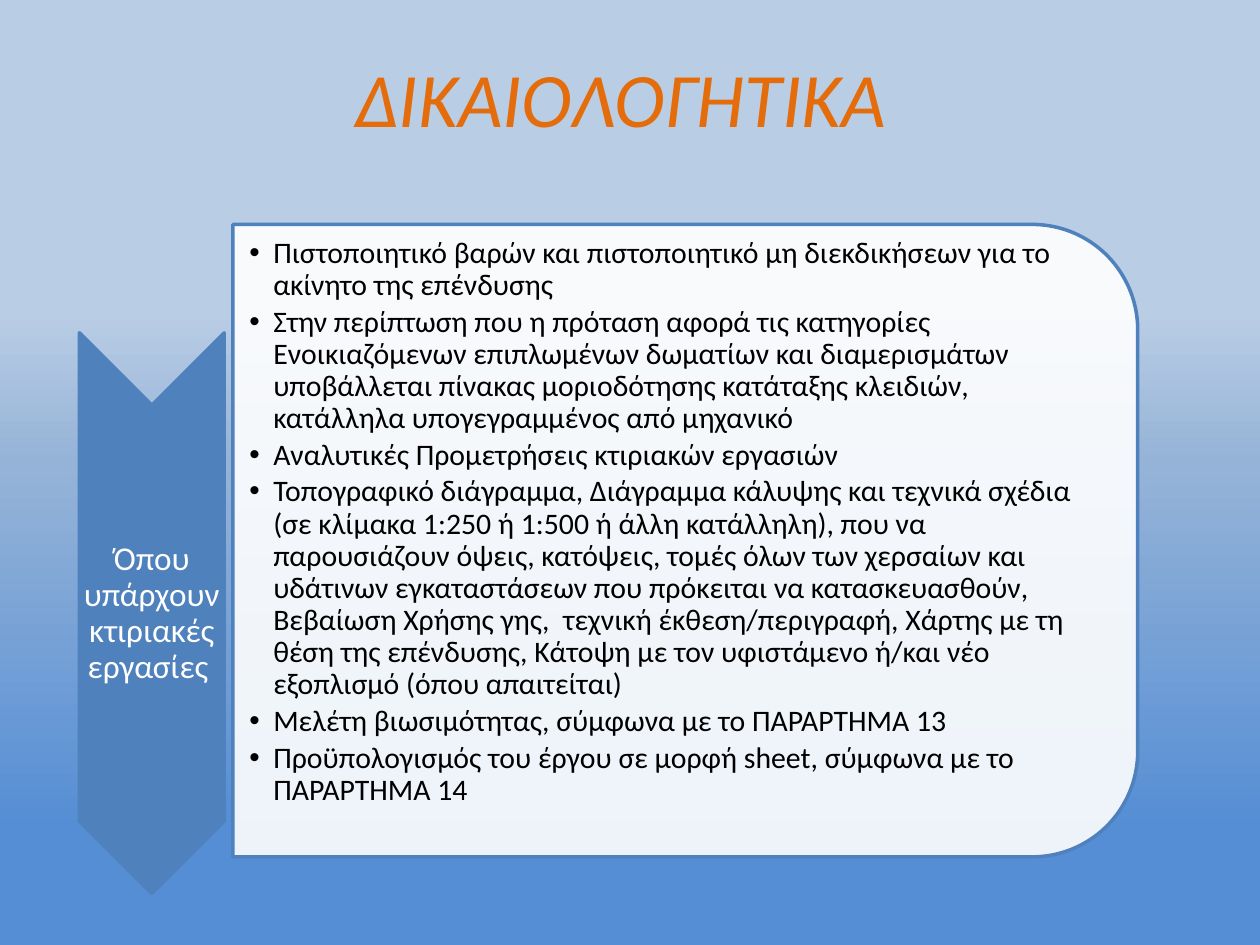
from copy import deepcopy

from lxml.etree import SubElement
from pptx import Presentation
from pptx.dml.color import RGBColor
from pptx.enum.shapes import MSO_SHAPE
from pptx.enum.text import MSO_ANCHOR, PP_ALIGN
from pptx.oxml.ns import qn
from pptx.util import Cm, Pt

FONT = "Calibri"
ACCENT = "4F81BD"
BACKGROUND_STOPS = [(33, "B9CDE5"), (49, "95B3D7"), (88, "558ED5")]
TITLE = "ΔΙΚΑΙΟΛΟΓΗΤΙΚΑ "
CATEGORY = "Όπου υπάρχουν κτιριακές εργασίες "
DOCUMENTS = [
    "Πιστοποιητικό βαρών και πιστοποιητικό μη διεκδικήσεων για το ακίνητο της επένδυσης",
    "Στην περίπτωση που η πρόταση αφορά τις κατηγορίες Ενοικιαζόμενων επιπλωμένων "
    "δωματίων και διαμερισμάτων υποβάλλεται πίνακας μοριοδότησης κατάταξης κλειδιών, "
    "κατάλληλα υπογεγραμμένος από μηχανικό",
    "Αναλυτικές Προμετρήσεις κτιριακών εργασιών",
    "Τοπογραφικό διάγραμμα, Διάγραμμα κάλυψης και τεχνικά σχέδια (σε κλίμακα 1:250 ή "
    "1:500 ή άλλη κατάλληλη), που να παρουσιάζουν όψεις, κατόψεις, τομές όλων των "
    "χερσαίων και υδάτινων εγκαταστάσεων που πρόκειται να κατασκευασθούν, Βεβαίωση "
    "Χρήσης γης,  τεχνική έκθεση/περιγραφή, Χάρτης με τη θέση της επένδυσης, Κάτοψη με "
    "τον υφιστάμενο ή/και νέο εξοπλισμό (όπου απαιτείται)",
    "Μελέτη βιωσιμότητας, σύμφωνα με το ΠΑΡΑΡΤΗΜΑ 13",
    "Προϋπολογισμός του έργου σε μορφή sheet, σύμφωνα με το ΠΑΡΑΡΤΗΜΑ 14",
]


def rgb(value):
    return RGBColor.from_string(value)


def format_paragraph(paragraph, size, color, alignment, italic=False):
    paragraph.alignment = alignment
    for run in paragraph.runs:
        run.font.name = FONT
        run.font.size = Pt(size)
        run.font.italic = italic
        run.font.color.rgb = rgb(color)


def set_background(slide):
    fill = slide.background.fill
    fill.gradient()
    fill.gradient_angle = 270
    stop_list = slide.background._cSld.find(".//" + qn("a:gsLst"))
    stop_list.insert(1, deepcopy(stop_list[0]))
    for stop, (position, color) in zip(fill.gradient_stops, BACKGROUND_STOPS):
        stop.position = position / 100
        stop.color.rgb = rgb(color)


def set_title(slide):
    title = slide.shapes.title
    title.left, title.top = Cm(1.27), Cm(0.76)
    title.width, title.height = Cm(22.86), Cm(2.36)
    title.text_frame.text = TITLE
    title.text_frame.vertical_anchor = MSO_ANCHOR.MIDDLE
    format_paragraph(title.text_frame.paragraphs[0], 44, "E46C0A", PP_ALIGN.CENTER, True)


def add_rotated_shape(slide, kind, box, color, opacity=100):
    shape = slide.shapes.add_shape(kind, *map(Cm, box))
    shape.rotation = 90
    shape.shadow.inherit = False
    shape.fill.solid()
    shape.fill.fore_color.rgb = rgb(color)
    shape.line.color.rgb = rgb(ACCENT)
    shape.line.width = Pt(2)
    if opacity < 100:
        color_element = shape._element.spPr.find(qn("a:solidFill"))[0]
        SubElement(color_element, qn("a:alpha"), val=str(opacity * 1000))


def add_text(slide, box, lines, size, color, alignment, anchor, left_margin=0.03):
    text_frame = slide.shapes.add_textbox(*map(Cm, box)).text_frame
    text_frame.word_wrap = True
    text_frame.vertical_anchor = anchor
    text_frame.margin_left = Cm(left_margin)
    text_frame.margin_top = text_frame.margin_right = text_frame.margin_bottom = Cm(0.03)
    text_frame.text = "\n".join(lines)
    for paragraph in text_frame.paragraphs:
        format_paragraph(paragraph, size, color, alignment)
        paragraph.line_spacing = 0.9
    return text_frame


def add_bullets(text_frame):
    for paragraph in text_frame.paragraphs:
        paragraph.level = 1
        paragraph.space_after = Pt(2.6)
        properties = paragraph._p.get_or_add_pPr()
        properties.set("marL", str(Cm(0.48)))
        properties.set("indent", str(-Cm(0.48)))
        SubElement(properties, qn("a:buFont"), typeface="Arial")
        SubElement(properties, qn("a:buChar"), char="•")


def main():
    presentation = Presentation()
    presentation.slide_width, presentation.slide_height = Cm(25.4), Cm(19.05)
    slide = presentation.slides.add_slide(presentation.slide_layouts[5])
    set_background(slide)
    set_title(slide)
    add_rotated_shape(slide, MSO_SHAPE.CHEVRON, (-2.59, 10.9, 11.3, 2.92), ACCENT)
    add_text(slide, (1.6, 8.18, 2.92, 8.38), [CATEGORY], 19, "FFFFFF",
             PP_ALIGN.CENTER, MSO_ANCHOR.MIDDLE)
    add_rotated_shape(slide, MSO_SHAPE.ROUND_2_SAME_RECTANGLE,
                      (7.44, 1.78, 12.75, 18.24), "FFFFFF", 90)
    documents = add_text(slide, (4.7, 4.76, 17.6, 11.7), DOCUMENTS, 17, "000000",
                         PP_ALIGN.LEFT, MSO_ANCHOR.TOP, 0.33)
    add_bullets(documents)
    presentation.save("out.pptx")


if __name__ == "__main__":
    main()
